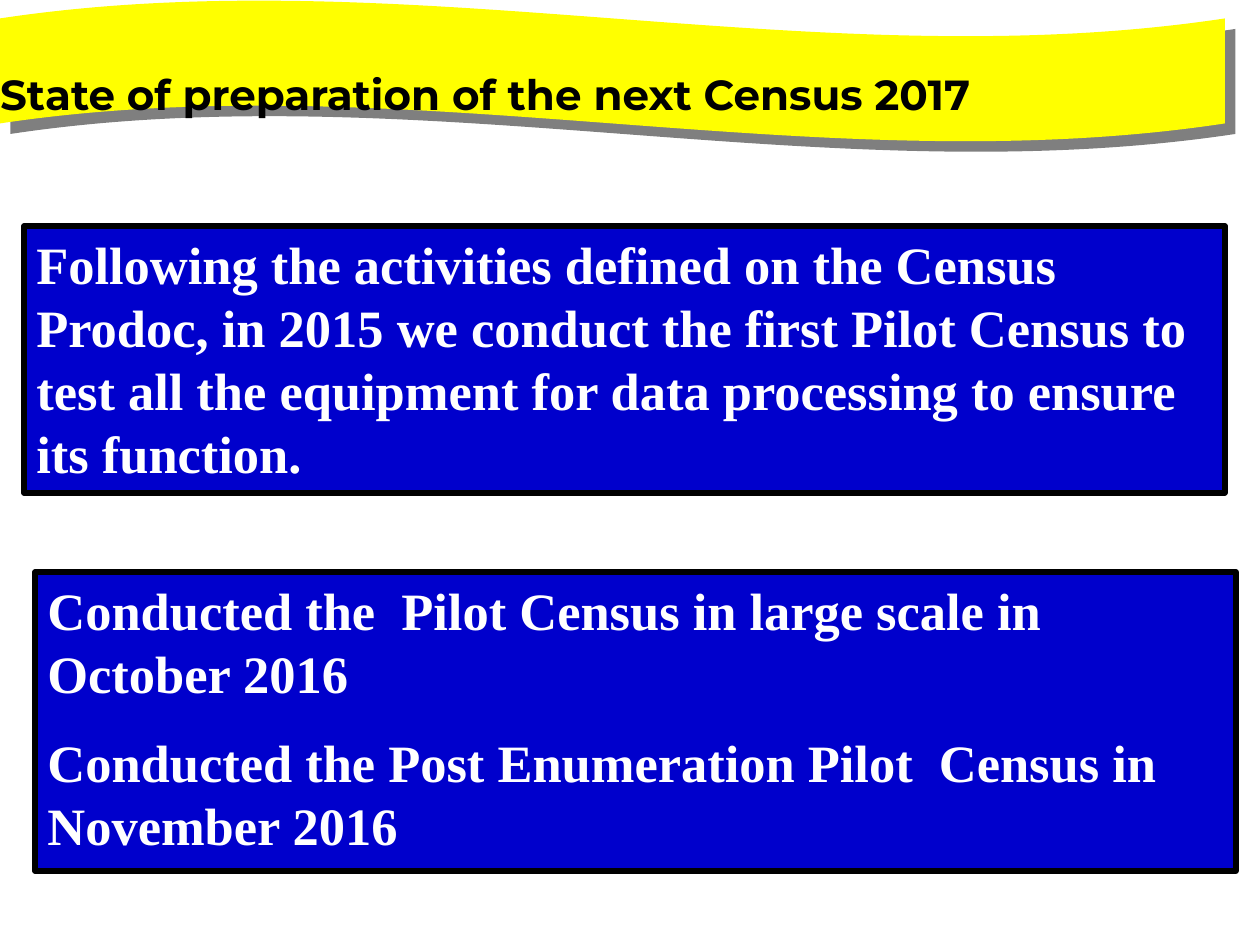
from lxml import etree
from pptx import Presentation
from pptx.dml.color import RGBColor
from pptx.enum.shapes import MSO_SHAPE
from pptx.enum.text import MSO_ANCHOR, MSO_AUTO_SIZE, PP_ALIGN
from pptx.oxml.ns import qn
from pptx.util import Emu, Pt

WAVE, RECTANGLE = MSO_SHAPE.WAVE, MSO_SHAPE.RECTANGLE
TOP, LEFT = MSO_ANCHOR.TOP, PP_ALIGN.LEFT
GROW = MSO_AUTO_SIZE.SHAPE_TO_FIT_TEXT
PX = 914400 // 126

TITLE_FONT = {"name": "Montserrat", "size": Pt(24), "bold": True}
BODY_FONT = {"name": "Times New Roman", "size": Pt(30), "bold": True}


def px(length):
    return Emu(length * PX)


def color(hex_value):
    return RGBColor.from_string(hex_value)


def add_plain_shape(shapes, kind, box, fill=None):
    """Add a shape without outline or shadow, filled only if a colour is given."""
    shape = shapes.add_shape(kind, *map(px, box))
    shape.shadow.inherit = False
    shape.line.fill.background()
    if fill:
        shape.fill.solid()
        shape.fill.fore_color.rgb = color(fill)
    else:
        shape.fill.background()
    return shape


def write_paragraphs(shape, texts, font_format, font_color):
    frame = shape.text_frame
    frame.word_wrap = True
    frame.auto_size = GROW
    frame.vertical_anchor = TOP
    for index, text in enumerate(texts):
        paragraph = frame.add_paragraph() if index else frame.paragraphs[0]
        paragraph.alignment = LEFT
        if index:
            paragraph.space_before = Pt(15)
        run = paragraph.add_run()
        run.text = text
        run.font.color.rgb = color(font_color)
        for attribute, value in font_format.items():
            setattr(run.font, attribute, value)


def add_offset_shadow(shape, hex_value):
    """Cast a half-transparent hard shadow down and to the right."""
    effects = shape._element.spPr.find(qn("a:effectLst"))
    shadow = etree.SubElement(effects, qn("a:outerShdw"), dist=str(Pt(8.5)),
                              dir="2700000", algn="ctr", rotWithShape="0")
    tint = etree.SubElement(shadow, qn("a:srgbClr"), val=hex_value)
    etree.SubElement(tint, qn("a:alpha"), val="50000")


def add_banner(slide, box, title):
    """Draw the yellow wave with its title on a taller, unfilled wave."""
    left, top, width, height = box
    shapes = slide.shapes.add_group_shape().shapes
    band = add_plain_shape(shapes, WAVE, box, "FFFF00")
    add_offset_shadow(band, "000000")
    heading = add_plain_shape(shapes, WAVE, (left, top, width - 70, height + 123))
    for wave in (band, heading):
        wave.adjustments[0] = 0.13
        wave.adjustments[1] = 0
    frame = heading.text_frame
    for side in ("left", "top", "right", "bottom"):
        setattr(frame, f"margin_{side}", 0)
    write_paragraphs(heading, [title], TITLE_FONT, "000000")


def add_statement_panel(slide, box, texts):
    panel = add_plain_shape(slide.shapes, RECTANGLE, box, "0000CC")
    panel.line.color.rgb = color("000000")
    panel.line.width = Pt(3)
    write_paragraphs(panel, texts, BODY_FONT, "FFFFFF")


def main():
    presentation = Presentation()
    presentation.slide_width = px(1260)
    presentation.slide_height = px(945)
    slide = presentation.slides.add_slide(presentation.slide_layouts[6])

    add_banner(slide, (0, 0, 1225, 142), "State of preparation of the next Census 2017")
    add_statement_panel(slide, (24, 226, 1201, 267), [
        "Following the activities defined on the Census Prodoc, in 2015 we conduct "
        "the first Pilot Census to test all the equipment for data processing to "
        "ensure its function.",
    ])
    add_statement_panel(slide, (35, 572, 1201, 299), [
        "Conducted the  Pilot Census in large scale in October 2016",
        "Conducted the Post Enumeration Pilot  Census in November 2016",
    ])
    presentation.save("out.pptx")


if __name__ == "__main__":
    main()
